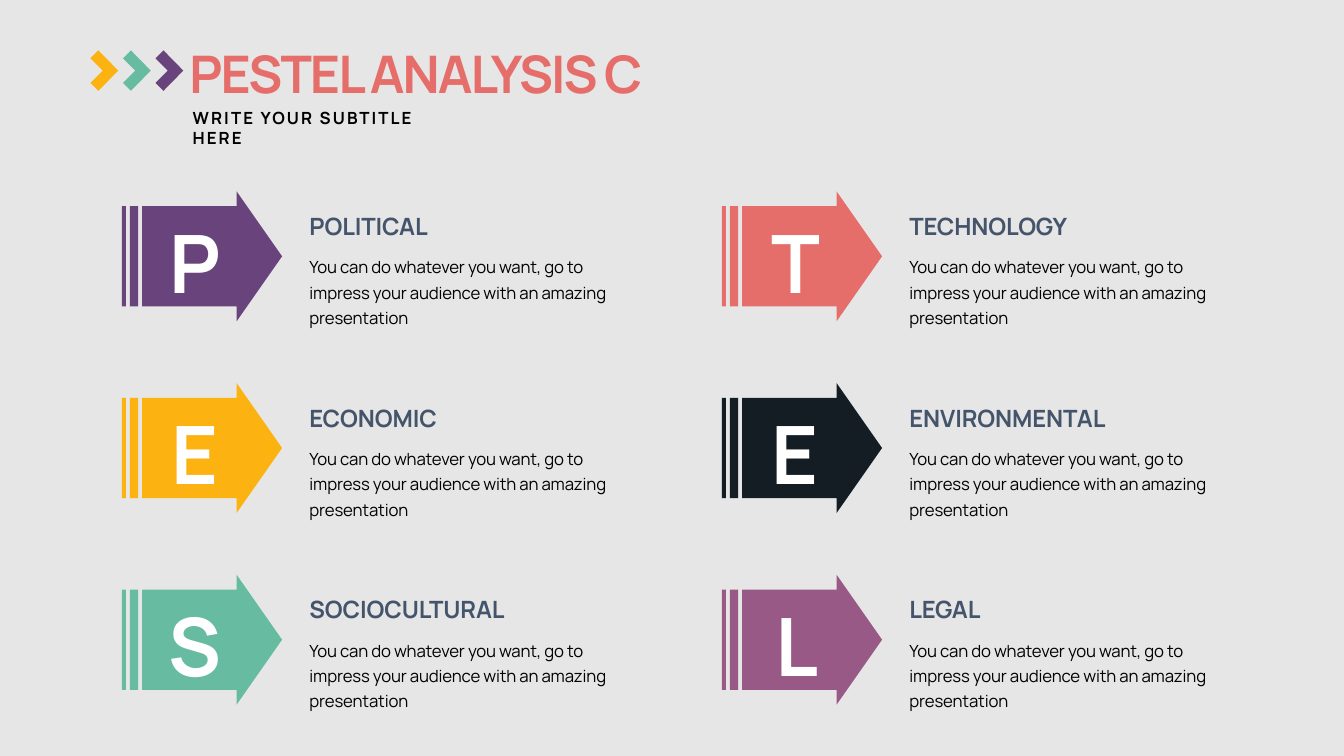
import pptx
import pptx.dml.color
import pptx.enum.shapes
import pptx.enum.text
import pptx.util

Cm, Pt = pptx.util.Cm, pptx.util.Pt
ALIGN = pptx.enum.text.PP_ALIGN
ANCHOR = pptx.enum.text.MSO_ANCHOR

FONT = "Manrope"
BACKGROUND, SLATE, BLACK, WHITE = "E6E6E6", "44546A", "000000", "FFFFFF"
PURPLE, AMBER, GREEN, CORAL = "69437B", "FCB210", "67BBA1", "E66E6A"
NAVY, PLUM = "141C24", "985986"

TITLE = "PESTEL ANALYSIS C"
SUBTITLE = "WRITE YOUR SUBTITLE HERE"
DETAIL = ("You can do whatever you want, go to impress your audience "
          "with an amazing presentation")
COLUMNS = [
    [("P ", "POLITICAL", PURPLE), ("E ", "ECONOMIC", AMBER), ("S ", "SOCIOCULTURAL", GREEN)],
    [("T ", "TECHNOLOGY", CORAL), ("E ", "ENVIRONMENTAL", NAVY), ("L ", "LEGAL", PLUM)],
]
CHEVRON_COLOURS = [AMBER, GREEN, PURPLE]

# Lengths in centimetres
GRID_LEFT, GRID_TOP = 3.07, 4.82
COLUMN_STEP, ROW_STEP = 15.12, 4.83
ARROW_SIZE = (4.04, 3.28)
CHEVRON_LEFT, CHEVRON_TOP, CHEVRON_STEP = 2.28, 1.27, 0.82
CHEVRON_OUTLINE = [(0.2, 1.02), (0.7, 0.51), (0.2, 0), (0, 0.2), (0.31, 0.51), (0, 0.82)]


def colour(value):
    return pptx.dml.color.RGBColor.from_string(value)


def paint(shape, value):
    shape.shadow.inherit = False
    shape.fill.solid()
    shape.fill.fore_color.rgb = colour(value)
    shape.line.fill.background()


def place(box, left, top, width, height):
    box.left, box.top, box.width, box.height = Cm(left), Cm(top), Cm(width), Cm(height)


def write(box, text, size, ink, bold=True, tracking=0.0, align=ALIGN.LEFT,
          anchor=ANCHOR.TOP, line_height=None):
    """Fill a box with one run; tracking is the letter spacing in points."""
    frame = box.text_frame
    frame.word_wrap = True
    frame.auto_size = pptx.enum.text.MSO_AUTO_SIZE.SHAPE_TO_FIT_TEXT
    frame.vertical_anchor = anchor
    para = frame.paragraphs[0]
    para.alignment = align
    para.space_before = Pt(0)
    if line_height:
        para.line_spacing = Pt(line_height)
    span = para.add_run()
    span.text = text
    span.font.name = FONT
    span.font.size = Pt(size)
    span.font.bold = bold
    span.font.color.rgb = colour(ink)
    span.font._element.set("spc", str(round(tracking * 100)))


def add_text(page, area, text, size, ink, **style):
    box = page.shapes.add_textbox(*map(Cm, area))
    write(box, text, size, ink, **style)


def add_factor(page, left, top, letter, heading, fill):
    """Draw one striped arrow with its letter, heading and detail."""
    arrow = page.shapes.add_shape(
        pptx.enum.shapes.MSO_SHAPE.STRIPED_RIGHT_ARROW,
        Cm(left), Cm(top), *map(Cm, ARROW_SIZE))
    arrow.adjustments[0], arrow.adjustments[1] = 0.77, 0.35
    paint(arrow, fill)
    text_left = left + 4.48
    add_text(page, (text_left, top + 0.37, 8.13, 0.99), heading, 17, SLATE,
             tracking=-0.1, anchor=ANCHOR.BOTTOM)
    add_text(page, (text_left, top + 1.41, 8.13, 2.16), DETAIL, 12, BLACK,
             bold=False, tracking=-0.1, line_height=18)
    add_text(page, (left + 0.8, top + 0.4, 2.44, 2.72), letter, 57.5, WHITE,
             tracking=-1.4, align=ALIGN.CENTER, anchor=ANCHOR.MIDDLE)


def add_chevron(page, left, top, fill):
    points = [(Cm(left + x), Cm(top + y)) for x, y in CHEVRON_OUTLINE]
    builder = page.shapes.build_freeform(*points[0])
    builder.add_line_segments(points[1:], close=True)
    paint(builder.convert_to_shape(), fill)


def main():
    deck = pptx.Presentation()
    deck.slide_width, deck.slide_height = Cm(33.87), Cm(19.05)
    page = deck.slides.add_slide(deck.slide_layouts[0])
    page.background.fill.solid()
    page.background.fill.fore_color.rgb = colour(BACKGROUND)

    title, subtitle = page.placeholders
    place(title, 4.52, 0.91, 29.64, 1.83)
    write(title, TITLE, 37, CORAL, tracking=-1.4, anchor=ANCHOR.BOTTOM)
    place(subtitle, 4.6, 2.59, 7.14, 0.76)
    write(subtitle, SUBTITLE, 12, BLACK, tracking=1.5)

    for index, fill in enumerate(CHEVRON_COLOURS):
        add_chevron(page, CHEVRON_LEFT + index * CHEVRON_STEP, CHEVRON_TOP, fill)

    for column, factors in enumerate(COLUMNS):
        for row, factor in enumerate(factors):
            add_factor(page, GRID_LEFT + column * COLUMN_STEP,
                       GRID_TOP + row * ROW_STEP, *factor)

    deck.save("out.pptx")


if __name__ == "__main__":
    main()
